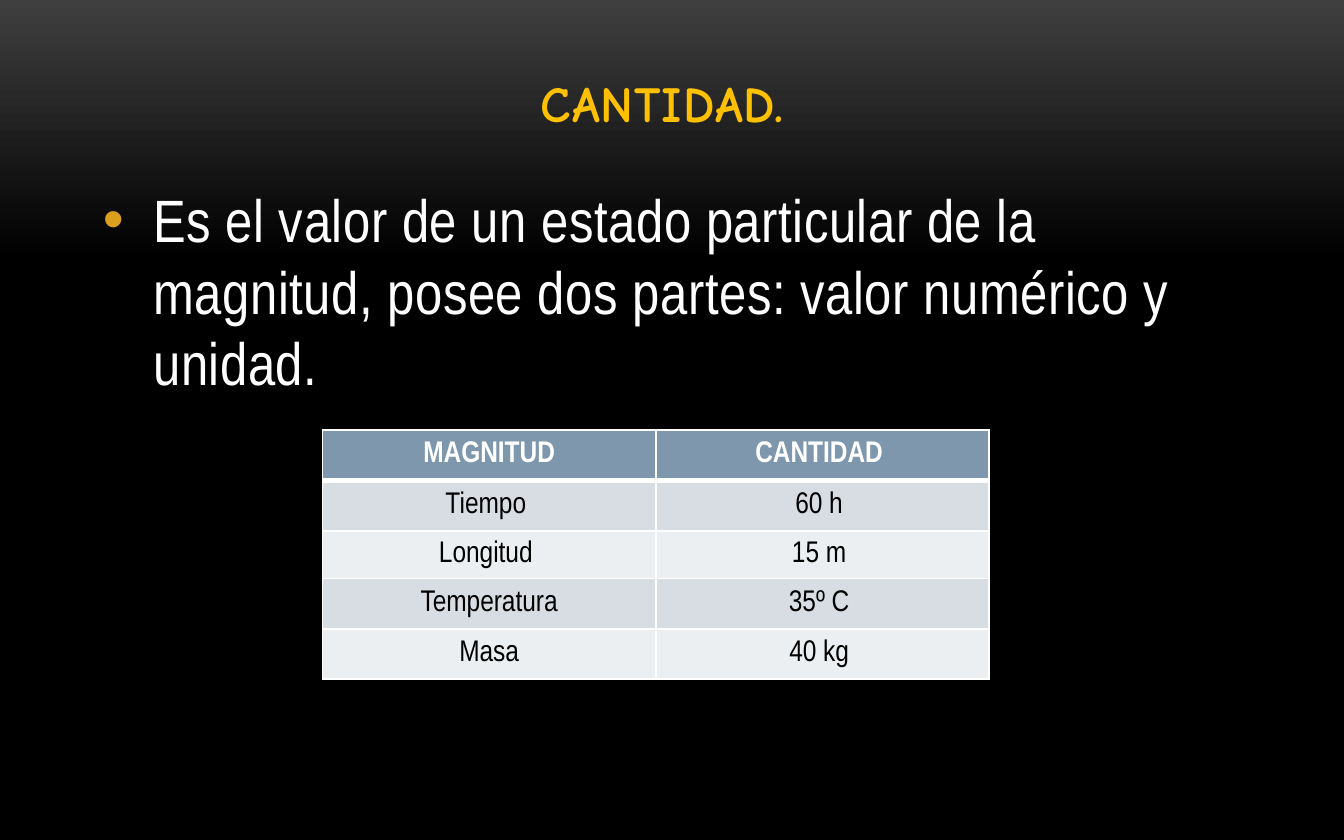
"""Build the slide that defines a quantity and lists examples in a table."""
import pptx
import pptx.dml.color
import pptx.enum.text
import pptx.oxml
import pptx.oxml.ns
import pptx.util

Pt = pptx.util.Pt
ALIGN = pptx.enum.text.PP_ALIGN
ANCHOR = pptx.enum.text.MSO_ANCHOR

HEADING = "CANTIDAD. "
DEFINITION = ("Es el valor de un estado particular de la magnitud, "
              "posee dos partes: valor numérico y unidad.")
EXAMPLES = [
    ("MAGNITUD", "CANTIDAD "),
    ("Tiempo ", "60 h "),
    ("Longitud ", "15 m "),
    ("Temperatura", "35º C "),
    ("Masa", "40 kg "),
]
ROW_HEIGHTS = [27, 27, 25.5, 27, 27]
COLUMN_WIDTH = 178.56
TABLE_LEFT, TABLE_TOP = 172.8, 230.4
BODY_FONT = "Arial Narrow"
HEADER_FILL, BAND_FILLS = "7E97AD", ("D8DDE3", "ECEFF1")
WHITE, BLACK = "FFFFFF", "000000"


def color(value):
    return pptx.dml.color.RGBColor.from_string(value)


def element(xml):
    namespace = pptx.oxml.ns.nsdecls("a")
    return pptx.oxml.parse_xml(xml.replace(" ", f" {namespace} ", 1))


def add_run(paragraph, text, font, size, ink, bold=False, spacing=0):
    run = paragraph.add_run()
    run.text = text
    run.font.name = font
    run.font.size = Pt(size)
    run.font.bold = bold
    run.font.color.rgb = color(ink)
    if spacing:
        run.font._element.set("spc", str(round(spacing * 100)))


def paint_background(slide):
    fill = slide.background.fill
    fill.gradient()
    fill.gradient_angle = 270
    for stop, (position, shade) in zip(fill.gradient_stops, [(0, "3F3F3F"), (0.31, BLACK)]):
        stop.position = position
        stop.color.rgb = color(shade)


def add_heading(slide):
    heading = slide.shapes.title
    heading.left, heading.top, heading.width, heading.height = Pt(48), Pt(31), Pt(624), Pt(75)
    frame = heading.text_frame
    frame.auto_size = pptx.enum.text.MSO_AUTO_SIZE.NONE
    frame.vertical_anchor = ANCHOR.BOTTOM
    frame.margin_bottom = Pt(35)
    frame.paragraphs[0].alignment = ALIGN.CENTER
    add_run(frame.paragraphs[0], HEADING, "Comic Neue", 27, "FFC000", True, 0.5)


def add_definition(slide):
    frame = slide.shapes.add_textbox(Pt(48), Pt(94.3), Pt(624), Pt(270)).text_frame
    frame.word_wrap = True
    paragraph = frame.paragraphs[0]
    properties = paragraph._p.get_or_add_pPr()
    properties.set("marL", str(Pt(27)))
    properties.set("indent", str(-Pt(27)))
    properties.append(element('<a:buClr ><a:srgbClr val="DC9E1F"/></a:buClr>'))
    properties.append(element('<a:buFont typeface="Arial"/>'))
    properties.append(element('<a:buChar char="•"/>'))
    paragraph.space_after = Pt(6)
    add_run(paragraph, DEFINITION, BODY_FONT, 32, WHITE, spacing=0.3)


def add_borders(cell, bottom_width):
    properties = cell._tc.get_or_add_tcPr()
    widths = {"lnL": 1, "lnR": 1, "lnT": 1, "lnB": bottom_width}
    for index, (side, width) in enumerate(widths.items()):
        properties.insert(index, element(
            f'<a:{side} w="{Pt(width)}"><a:solidFill>'
            f'<a:srgbClr val="{WHITE}"/></a:solidFill></a:{side}>'))


def add_examples(slide):
    columns = len(EXAMPLES[0])
    table = slide.shapes.add_table(
        len(EXAMPLES), columns, Pt(TABLE_LEFT), Pt(TABLE_TOP),
        Pt(COLUMN_WIDTH * columns), Pt(sum(ROW_HEIGHTS))).table
    for column in table.columns:
        column.width = Pt(COLUMN_WIDTH)
    for row, (texts, height) in enumerate(zip(EXAMPLES, ROW_HEIGHTS)):
        table.rows[row].height = Pt(height)
        header = row == 0
        for column, text in enumerate(texts):
            cell = table.cell(row, column)
            cell.fill.solid()
            cell.fill.fore_color.rgb = color(HEADER_FILL if header else BAND_FILLS[(row - 1) % 2])
            cell.vertical_anchor = ANCHOR.MIDDLE
            cell.margin_left = cell.margin_right = Pt(7.2)
            cell.margin_top = cell.margin_bottom = Pt(3)
            paragraph = cell.text_frame.paragraphs[0]
            paragraph.alignment = ALIGN.CENTER
            add_run(paragraph, text, BODY_FONT, 16, WHITE if header else BLACK, header)
            add_borders(cell, 3 if header else 1)
            if row == 1:
                cell._tc.tcPr.find(pptx.oxml.ns.qn("a:lnT")).set("w", str(Pt(3)))


def main():
    presentation = pptx.Presentation()
    presentation.slide_width, presentation.slide_height = Pt(720), Pt(450)
    slide = presentation.slides.add_slide(presentation.slide_layouts[5])
    paint_background(slide)
    add_heading(slide)
    add_definition(slide)
    add_examples(slide)
    presentation.save("out.pptx")


if __name__ == "__main__":
    main()
